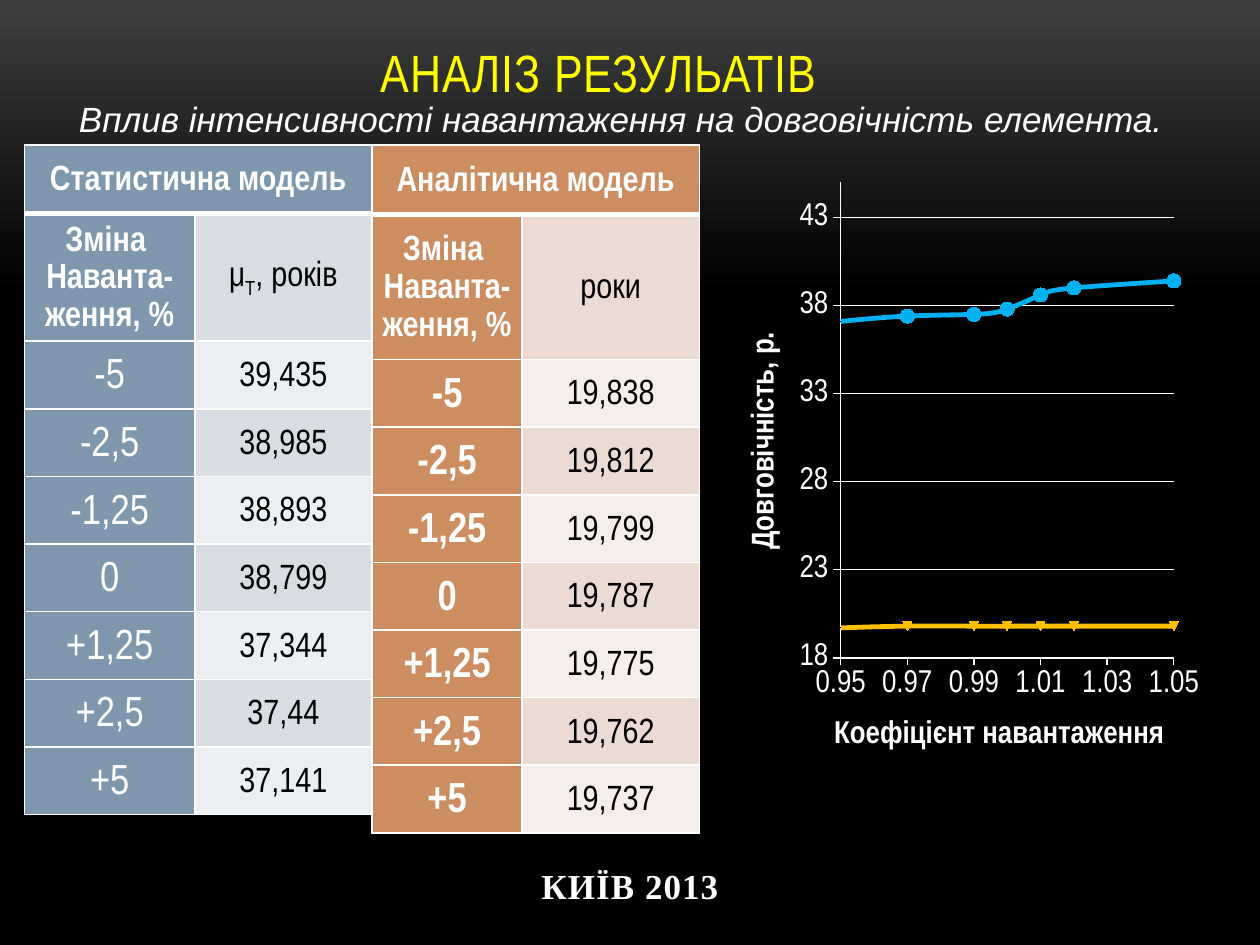
from lxml.etree import SubElement
from pptx import Presentation
from pptx.chart.data import XyChartData
from pptx.dml.color import RGBColor
from pptx.enum.chart import XL_CHART_TYPE, XL_MARKER_STYLE, XL_TICK_LABEL_POSITION, XL_TICK_MARK
from pptx.enum.text import MSO_ANCHOR, PP_ALIGN
from pptx.oxml.ns import qn
from pptx.util import Pt

COLORS = {
    "white": "FFFFFF", "black": "000000", "glow": "3F3F3F", "yellow": "FFFF00",
    "blue": "7E97AD", "blue_mid": "D8DDE3", "blue_pale": "ECEFF1",
    "orange": "CC8E60", "orange_mid": "ECDBD2", "orange_pale": "F6EEEA",
    "cyan": "00B0F0", "amber": "FFC000",
}
NARROW = "Arial Narrow"
TITLE = "АНАЛІЗ РЕЗУЛЬАТІВ"
SUBTITLE = "Вплив інтенсивності навантаження на довговічність елемента."
FOOTER = "КИЇВ 2013"
CHANGE_HEADING = ["Зміна ", "Наванта-ження, %"]
CHANGES = ["-5", "-2,5", "-1,25", "0", "+1,25", "+2,5", "+5"]
ROW_HEIGHT = 38.65
MODELS = [
    {"name": "Статистична модель", "unit": [("μ", 0), ("Т", -25000), (", років", 0)],
     "values": ["39,435", "38,985", "38,893", "38,799", "37,344", "37,44", "37,141"],
     "hue": "blue", "bold": False, "left": 14, "columns": (97.4, 101.1), "heads": (39.2, 73)},
    {"name": "Аналітична модель", "unit": [("роки", 0)],
     "values": ["19,838", "19,812", "19,799", "19,787", "19,775", "19,762", "19,737"],
     "hue": "orange", "bold": True, "left": 212.6, "columns": (85.8, 101.2), "heads": (39.8, 82)},
]
LOADS = [1.05, 1.02, 1.01, 1, 0.99, 0.97, 0.95]
CURVES = [
    {"name": "Series 1", "values": [39.4, 39, 38.6, 37.8, 37.5, 37.4, 37.1],
     "color": "cyan", "symbol": XL_MARKER_STYLE.CIRCLE, "size": 8, "index": 0},
    {"name": "Series 2", "values": [19.8, 19.8, 19.8, 19.8, 19.8, 19.8, 19.7],
     "color": "amber", "symbol": None, "size": 5, "index": 2},
]
AXES = {
    "category": ("Коефіцієнт навантаження", 0.95, 1.05, 0.02),
    "value": ("Довговічність, р.", 18, 45, 5),
}
PLOT_AREA = {"x": 0.25, "y": 0.02, "w": 0.68, "h": 0.78}


def rgb(name):
    return RGBColor.from_string(COLORS[name])


def style(font, size, color, face=NARROW, bold=False, italic=False):
    font.size, font.name, font.bold, font.italic = Pt(size), face, bold, italic
    font.color.rgb = rgb(color)


def add_span(para, text, *look, spacing=None, baseline=0, **options):
    span = para.add_run()
    span.text = text
    style(span.font, *look, **options)
    properties = span.font._element
    if spacing:
        properties.set("spc", str(spacing))
    if baseline:
        properties.set("baseline", str(baseline))


def place(shape, left, top, width, height):
    shape.left, shape.top, shape.width, shape.height = map(Pt, (left, top, width, height))


def add_label(page, bounds, text, *look, align=PP_ALIGN.LEFT, wrap=True, **options):
    box = page.shapes.add_textbox(*map(Pt, bounds))
    box.text_frame.word_wrap = wrap
    box.text_frame.vertical_anchor = MSO_ANCHOR.MIDDLE
    para = box.text_frame.paragraphs[0]
    para.alignment = align
    add_span(para, text, *look, **options)


def fill_cell(cell, paragraphs, fill, size, color, bold, bottom=1):
    cell.vertical_anchor = MSO_ANCHOR.MIDDLE
    cell.margin_left = cell.margin_right = Pt(5)
    cell.margin_top = cell.margin_bottom = 0
    properties = cell._tc.get_or_add_tcPr()
    for side, width in (("L", 1), ("R", 1), ("T", 1), ("B", bottom)):
        line = SubElement(properties, qn(f"a:ln{side}"), w=str(Pt(width)))
        SubElement(SubElement(line, qn("a:solidFill")), qn("a:srgbClr"), val=COLORS["white"])
    cell.fill.solid()
    cell.fill.fore_color.rgb = rgb(fill)
    for index, spans in enumerate(paragraphs):
        para = cell.text_frame.add_paragraph() if index else cell.text_frame.paragraphs[0]
        para.alignment = PP_ALIGN.CENTER
        para.line_spacing = 1.15
        for text, baseline in spans:
            add_span(para, text, size, color, bold=bold, baseline=baseline)


def add_model(page, model):
    heights = [*model["heads"], *[ROW_HEIGHT] * len(CHANGES)]
    frame = page.shapes.add_table(len(heights), 2, Pt(model["left"]), Pt(82.8),
                                  Pt(sum(model["columns"])), Pt(sum(heights)))
    table, hue = frame.table, model["hue"]
    for column, width in zip(table.columns, model["columns"]):
        column.width = Pt(width)
    for row, height in zip(table.rows, heights):
        row.height = Pt(height)
    table.cell(0, 0).merge(table.cell(0, 1))
    fill_cell(table.cell(0, 0), [[(model["name"], 0)]], hue, 20, "white", True, bottom=3)
    fill_cell(table.cell(1, 0), [[(text, 0)] for text in CHANGE_HEADING], hue, 20, "white", True)
    fill_cell(table.cell(1, 1), [model["unit"]], f"{hue}_mid", 20, "black", False)
    for row, (change, value) in enumerate(zip(CHANGES, model["values"]), 2):
        tint = f"{hue}_mid" if row % 2 else f"{hue}_pale"
        fill_cell(table.cell(row, 0), [[(change, 0)]], hue, 24, "white", model["bold"])
        fill_cell(table.cell(row, 1), [[(value, 0)]], tint, 20, "black", False)


def format_axis(axis, title, low, high, step):
    axis.minimum_scale, axis.maximum_scale, axis.major_unit = low, high, step
    axis.major_tick_mark = XL_TICK_MARK.OUTSIDE
    axis.minor_tick_mark = XL_TICK_MARK.NONE
    axis.tick_label_position = XL_TICK_LABEL_POSITION.LOW
    axis.has_major_gridlines = False
    axis.format.line.color.rgb = rgb("white")
    axis.format.line.width = Pt(0.75)
    style(axis.tick_labels.font, 18, "white")
    add_span(axis.axis_title.text_frame.paragraphs[0], title, 18, "white", bold=True)


def format_curve(series, curve):
    color = rgb(curve["color"])
    series.smooth = True
    series._element.find(qn("c:smooth")).set("val", "1")
    series._element.find(qn("c:idx")).set("val", str(curve["index"]))
    series.format.line.color.rgb = color
    series.format.line.width = Pt(2.75)
    marker = series.marker
    marker.style, marker.size = curve["symbol"], curve["size"]
    marker.format.fill.solid()
    marker.format.fill.fore_color.rgb = color
    marker.format.line.color.rgb = color
    last = series.points[len(LOADS) - 1]
    last.marker.style = XL_MARKER_STYLE.NONE
    last.format.line.color.rgb = color
    last.format.line.width = Pt(2.75)


def add_durability_chart(page):
    data = XyChartData()
    for curve in CURVES:
        series = data.add_series(curve["name"])
        for load, value in zip(LOADS, curve["values"]):
            series.add_data_point(load, value)
    frame = page.shapes.add_chart(XL_CHART_TYPE.XY_SCATTER_SMOOTH, Pt(410.4), Pt(97.2),
                                  Pt(280), Pt(348.5), data)
    chart = frame.chart
    chart.has_title = chart.has_legend = False
    style(chart.font, 18, "white")
    format_axis(chart.category_axis, *AXES["category"])
    format_axis(chart.value_axis, *AXES["value"])
    chart.value_axis.has_major_gridlines = True
    grid = chart.value_axis.major_gridlines.format.line
    grid.color.rgb, grid.width = rgb("white"), Pt(0.75)
    chart.plots[0].vary_by_categories = False
    for series, curve in zip(chart.plots[0].series, CURVES):
        format_curve(series, curve)
    area = chart._chartSpace.chart.plotArea
    for layout in area.findall(qn("c:layout")):
        area.remove(layout)
    layout = area.makeelement(qn("c:layout"))
    area.insert(0, layout)
    manual = SubElement(layout, qn("c:manualLayout"))
    SubElement(manual, qn("c:layoutTarget"), val="inner")
    for mode in ("xMode", "yMode"):
        SubElement(manual, qn(f"c:{mode}"), val="edge")
    for key, value in PLOT_AREA.items():
        SubElement(manual, qn(f"c:{key}"), val=str(value))


def main():
    """Build the durability results slide."""
    deck = Presentation()
    deck.slide_width, deck.slide_height = Pt(720), Pt(540)
    page = deck.slides.add_slide(deck.slide_layouts[5])
    backdrop = page.background.fill
    backdrop.gradient()
    backdrop.gradient_angle = 270
    for stop, color, position in zip(backdrop.gradient_stops, ("glow", "black"), (0, 0.31)):
        stop.color.rgb, stop.position = rgb(color), position
    title = page.shapes.title
    place(title, 48.2, 13, 588, 49.5)
    title.text_frame.vertical_anchor = MSO_ANCHOR.BOTTOM
    para = title.text_frame.paragraphs[0]
    para.alignment = PP_ALIGN.CENTER
    add_span(para, TITLE, 30, "yellow", spacing=50)
    add_model(page, MODELS[0])
    add_label(page, (38, 52.2, 644, 31.5), SUBTITLE, 20, "white", face="Arial", italic=True, wrap=False)
    add_durability_chart(page)
    add_model(page, MODELS[1])
    add_label(page, (0, 478, 720, 56), FOOTER, 20, "white", face="Times New Roman", bold=True,
              align=PP_ALIGN.CENTER, spacing=60)
    deck.save("out.pptx")


if __name__ == "__main__":
    main()
